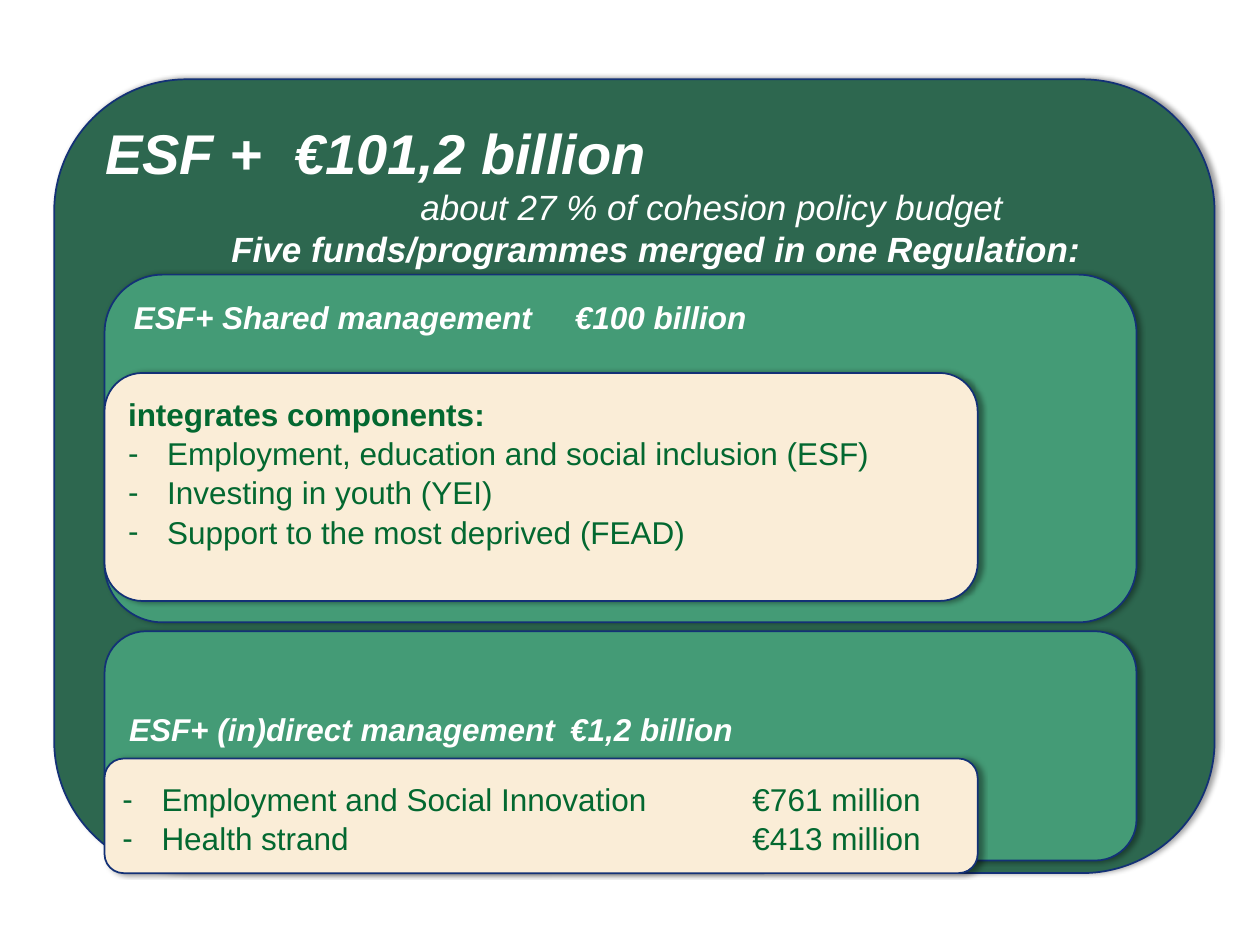
from dataclasses import dataclass
from typing import Optional

from lxml import etree
from pptx import Presentation
from pptx.dml import color
from pptx.enum import shapes, text
from pptx.oxml import ns
from pptx.util import Emu, Inches, Pt

COLUMNS, ROWS = 100, 75
SLIDE_WIDTH, SLIDE_HEIGHT = Inches(10), Inches(7.5)
FOREST, GREEN, CREAM = "2D674F", "449B76", "FAEDD7"
WHITE, INK, NAVY = "FFFFFF", "036830", "133176"
AMOUNT_TAB = 50
HANGING = 3.1


@dataclass(frozen=True)
class Line:
    words: str
    size: int = 18
    bold: bool = False
    italic: bool = False
    indent: float = 0
    bullet: bool = False
    tab: Optional[float] = None


@dataclass(frozen=True)
class Panel:
    left: float
    top: float
    width: float
    height: float
    fill: str
    ink: str
    inset: float
    lines: tuple[Line, ...]
    corner: float = 0.16667


def rgb(value: str) -> color.RGBColor:
    return color.RGBColor.from_string(value)


def across(columns: float) -> Emu:
    return Emu(round(SLIDE_WIDTH * columns / COLUMNS))


def down(rows: float) -> Emu:
    return Emu(round(SLIDE_HEIGHT * rows / ROWS))


def add_node(parent, tag: str, **attributes):
    return etree.SubElement(parent, ns.qn(tag), {k: str(v) for k, v in attributes.items()})


def cast_shadow(shape) -> None:
    shape.shadow.inherit = False
    effects = shape._element.spPr.find(ns.qn("a:effectLst"))
    shadow = add_node(effects, "a:outerShdw", blurRad=Pt(3.1), dist=Pt(1.8), dir=0,
                      algn="ctr", rotWithShape=0)
    tint = add_node(shadow, "a:srgbClr", val="000000")
    add_node(tint, "a:alpha", val=40000)


def write_line(paragraph, line: Line, ink: str, first: bool) -> None:
    paragraph.alignment = text.PP_ALIGN.LEFT
    if line.bullet and not first:
        paragraph.space_before = Pt(0.7)
    properties = paragraph._p.get_or_add_pPr()
    indent = HANGING if line.bullet else line.indent
    properties.set("marL", str(across(indent)))
    properties.set("indent", str(-across(indent) if line.bullet else 0))
    if line.bullet:
        add_node(properties, "a:buFont", typeface="Arial")
        add_node(properties, "a:buChar", char="-")
    else:
        add_node(properties, "a:buNone")
    if line.tab is not None:
        stops = add_node(properties, "a:tabLst")
        add_node(stops, "a:tab", pos=across(line.tab), algn="l")
    run = paragraph.add_run()
    run.text = line.words
    run.font.name = "Arial"
    run.font.size = Pt(line.size)
    run.font.bold = line.bold
    run.font.italic = line.italic
    run.font.color.rgb = rgb(ink)


def draw_panel(slide, panel: Panel) -> None:
    shape = slide.shapes.add_shape(
        shapes.MSO_SHAPE.ROUNDED_RECTANGLE, across(panel.left), down(panel.top),
        across(panel.width), down(panel.height))
    shape.adjustments[0] = panel.corner
    shape.fill.solid()
    shape.fill.fore_color.rgb = rgb(panel.fill)
    shape.line.color.rgb = rgb(NAVY)
    shape.line.width = Pt(1)
    cast_shadow(shape)
    frame = shape.text_frame
    frame.word_wrap = True
    frame.vertical_anchor = text.MSO_ANCHOR.TOP
    frame.margin_left = frame.margin_right = across(1)
    frame.margin_top, frame.margin_bottom = down(panel.inset), 0
    for index, line in enumerate(panel.lines):
        paragraph = frame.add_paragraph() if index else frame.paragraphs[0]
        write_line(paragraph, line, panel.ink, index == 0)


PANELS = (
    Panel(4.3, 6.3, 92.1, 63, FOREST, WHITE, 0, (
        Line("ESF +\t€101,2 billion", 32, True, True, tab=25),
        Line("about 27 % of cohesion policy budget", 20, italic=True, indent=25),
        Line("Five funds/programmes merged in one Regulation:", 20, True, True, indent=10))),
    Panel(8.3, 21.8, 81.9, 27.6, GREEN, WHITE, 0.5, (
        Line("ESF+ Shared management\t€100 billion", bold=True, italic=True, tab=AMOUNT_TAB),)),
    Panel(8.3, 50.1, 81.9, 18.2, GREEN, WHITE, 5.3, (
        Line("ESF+ (in)direct management\t€1,2 billion", bold=True, italic=True, tab=AMOUNT_TAB),),
        corner=0.18),
    Panel(8.3, 29.6, 69.3, 18.1, CREAM, INK, 0.9, (
        Line("integrates components:", bold=True),
        Line("Employment, education and social inclusion (ESF)", bullet=True),
        Line("Investing in youth (YEI)", bullet=True),
        Line("Support to the most deprived (FEAD)", bullet=True))),
    Panel(8.3, 60.2, 69.3, 9.1, CREAM, INK, 1.3, (
        Line("Employment and Social Innovation\t€761 million", bullet=True, tab=AMOUNT_TAB),
        Line("Health strand\t€413 million", bullet=True, tab=AMOUNT_TAB))),
)


def main() -> None:
    deck = Presentation()
    deck.slide_width, deck.slide_height = SLIDE_WIDTH, SLIDE_HEIGHT
    slide = deck.slides.add_slide(deck.slide_layouts[6])
    for panel in PANELS:
        draw_panel(slide, panel)
    deck.save("out.pptx")


if __name__ == "__main__":
    main()
